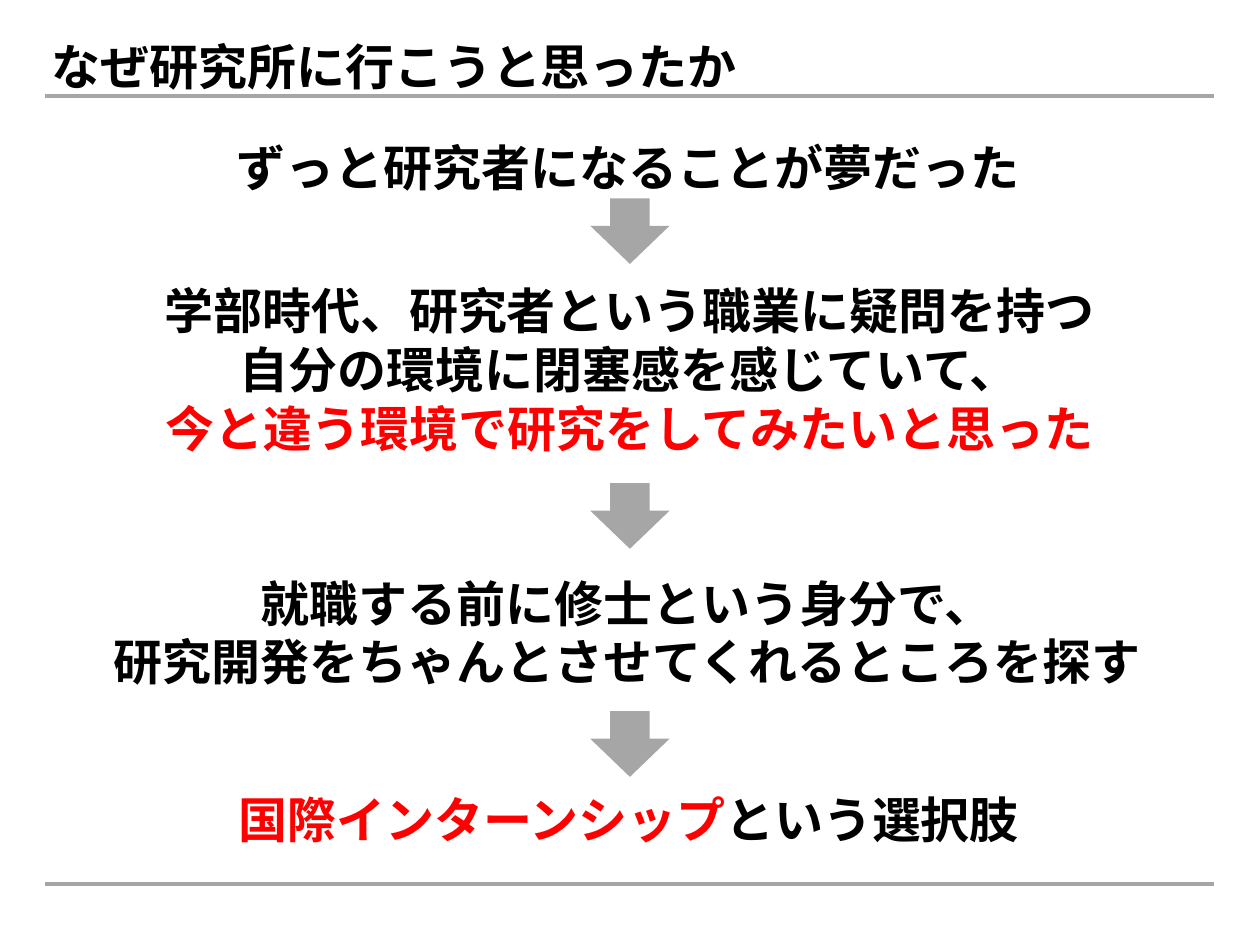
import pptx
import pptx.dml.color
import pptx.enum.shapes
import pptx.enum.text
import pptx.oxml.ns
import pptx.util
from lxml import etree

Pt = pptx.util.Pt
RGBColor = pptx.dml.color.RGBColor
PP_ALIGN = pptx.enum.text.PP_ALIGN

BLACK = RGBColor(0x00, 0x00, 0x00)
RED = RGBColor(0xFF, 0x00, 0x00)
GRAY = RGBColor(0xA6, 0xA6, 0xA6)
FONT = "Noto Sans CJK JP"


def add_run(paragraph, text, color):
    run = paragraph.add_run()
    run.text = text
    run.font.size = Pt(28)
    run.font.bold = True
    run.font.color.rgb = color
    run.font.name = FONT
    east_asian = etree.SubElement(run.font._element, pptx.oxml.ns.qn("a:ea"))
    east_asian.set("typeface", FONT)


def fill_text(holder, box, lines, alignment):
    holder.left, holder.top, holder.width, holder.height = map(Pt, box)
    frame = holder.text_frame
    frame.word_wrap = True
    frame.auto_size = pptx.enum.text.MSO_AUTO_SIZE.SHAPE_TO_FIT_TEXT
    frame.vertical_anchor = pptx.enum.text.MSO_ANCHOR.TOP
    for index, line in enumerate(lines):
        paragraph = frame.add_paragraph() if index else frame.paragraphs[0]
        paragraph.alignment = alignment
        for text, color in line:
            add_run(paragraph, text, color)


def add_statement(slide, box, lines):
    statement = slide.shapes.add_textbox(*map(Pt, box))
    fill_text(statement, box, lines, PP_ALIGN.CENTER)


def add_rule(slide, y):
    rule = slide.shapes.add_connector(
        pptx.enum.shapes.MSO_CONNECTOR.STRAIGHT, Pt(26), Pt(y), Pt(694), Pt(y))
    rule.line.color.rgb = GRAY
    rule.line.width = Pt(2.25)
    etree.SubElement(rule._element.spPr, pptx.oxml.ns.qn("a:effectLst"))


def add_step_arrow(slide, top):
    arrow = slide.shapes.add_shape(
        pptx.enum.shapes.MSO_SHAPE.RIGHT_ARROW,
        Pt(341.2), Pt(top), Pt(37.5), Pt(45.3))
    arrow.rotation = 90
    arrow.adjustments[0] = 0.5
    arrow.adjustments[1] = 0.58
    arrow.fill.solid()
    arrow.fill.fore_color.rgb = GRAY
    arrow.line.fill.background()
    arrow.shadow.inherit = False


def main():
    presentation = pptx.Presentation()
    presentation.slide_width = Pt(720)
    presentation.slide_height = Pt(540)
    slide = presentation.slides.add_slide(presentation.slide_layouts[5])

    fill_text(slide.shapes.title, (22.3, 17.3, 627.1, 41),
              [[("なぜ研究所に行こうと思ったか", BLACK)]], PP_ALIGN.LEFT)

    statements = [
        ((69.1, 74.9, 579.6, 41),
         [[("ずっと研究者になることが夢だった", BLACK)]]),
        ((69.8, 157, 579.6, 108.7),
         [[("学部時代、研究者という職業に疑問を持つ", BLACK)],
          [("自分の環境に閉塞感を感じていて、", BLACK)],
          [("今と違う環境で研究をしてみたいと思った", RED)]]),
        ((52.6, 324, 611.3, 74.9),
         [[("就職する前に修士という身分で、", BLACK)],
          [("研究開発をちゃんとさせてくれるところを探す", BLACK)]]),
        ((65.5, 447.8, 587.5, 41),
         [[("国際インターンシップ", RED), ("という選択肢", BLACK)]]),
    ]
    for box, lines in statements:
        add_statement(slide, box, lines)

    for top in (109.4, 272.2, 402.5):
        add_step_arrow(slide, top)

    for y in (54.7, 505.4):
        add_rule(slide, y)

    presentation.save("out.pptx")


if __name__ == "__main__":
    main()
